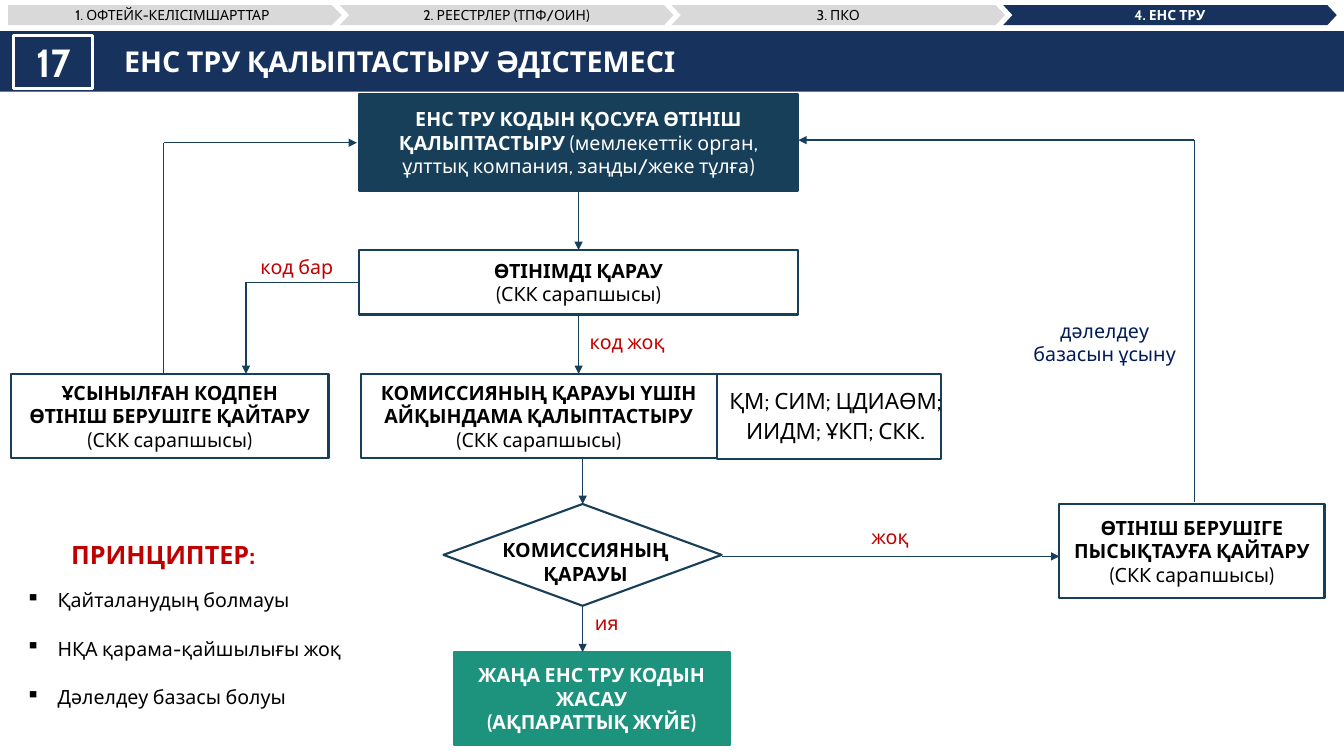
import pptx
import pptx.util
import pptx.dml.color
import pptx.enum.shapes
import pptx.enum.text
import pptx.oxml
import pptx.oxml.ns

Pt = pptx.util.Pt
RGBColor = pptx.dml.color.RGBColor
Shape = pptx.enum.shapes.MSO_SHAPE
Align = pptx.enum.text.PP_ALIGN
Anchor = pptx.enum.text.MSO_ANCHOR

NAVY = RGBColor(0x17, 0x33, 0x5D)
TEAL = RGBColor(0x17, 0x3F, 0x59)
GREEN = RGBColor(0x1D, 0x92, 0x7D)
GREY = RGBColor(0xD9, 0xD9, 0xD9)
RED = RGBColor(0xC0, 0x00, 0x00)
BLUE = RGBColor(0x00, 0x1C, 0x56)
WHITE = RGBColor(0xFF, 0xFF, 0xFF)
BLACK = RGBColor(0x00, 0x00, 0x00)


class Flowchart:
    font = "Cabin"
    size = 14

    def __init__(self, page):
        self.page = page

    def style(self, span, color, bold, size):
        span.font.name = self.font
        span.font.size = Pt(size)
        span.font.bold = bold
        span.font.color.rgb = color

    def add_span(self, para, text, color, size):
        span = para.add_run()
        span.text = text
        self.style(span, color, False, size)

    def put_text(self, box, text, color=BLACK, bold=(False,), size=size,
                 align=Align.CENTER, anchor=Anchor.MIDDLE, inset=7.2):
        frame = box.text_frame
        frame.word_wrap = True
        frame.auto_size = pptx.enum.text.MSO_AUTO_SIZE.NONE
        frame.vertical_anchor = anchor
        frame.margin_left = frame.margin_right = Pt(7.2)
        frame.margin_top = frame.margin_bottom = Pt(inset)
        frame.text = text
        for index, para in enumerate(frame.paragraphs):
            para.alignment = align
            for span in para.runs:
                self.style(span, color, bold[min(index, len(bold) - 1)], size)
        return frame

    def element(self, tag, attributes=""):
        return pptx.oxml.parse_xml(f'<a:{tag} {pptx.oxml.ns.nsdecls("a")} {attributes}/>')

    def shape(self, kind, place, fill=None, line=None, weight=1.5):
        item = self.page.shapes.add_shape(kind, *map(Pt, place))
        item.shadow.inherit = False
        if fill is None:
            item.fill.background()
        else:
            item.fill.solid()
            item.fill.fore_color.rgb = fill
        if line is None:
            item.line.fill.background()
        else:
            item.line.color.rgb = line
            item.line.width = Pt(weight)
        return item

    def title(self, place, text):
        box = self.page.shapes.title
        box.left, box.top, box.width, box.height = map(Pt, place)
        self.put_text(box, text, WHITE, (True,), 20.5, Align.LEFT, inset=3.6)
        return box

    def label(self, place, text, color=RED, **options):
        box = self.page.shapes.add_textbox(*map(Pt, place))
        return self.put_text(box, text, color, anchor=Anchor.TOP, **options)

    def step(self, place, text, fill=WHITE, line=TEAL, color=BLACK, bold=(True, False)):
        return self.put_text(self.shape(Shape.RECTANGLE, place, fill, line), text, color, bold)

    def route(self, *points):
        for start, end in zip(points, points[1:]):
            connector = self.page.shapes.add_connector(
                pptx.enum.shapes.MSO_CONNECTOR.STRAIGHT, *map(Pt, start + end))
            connector.line.color.rgb = TEAL
            connector.line.width = Pt(1)
            properties = connector.element.spPr
            if end == points[-1]:
                outline = properties.find(pptx.oxml.ns.qn("a:ln"))
                outline.append(self.element("tailEnd", 'type="triangle"'))
            properties.append(self.element("effectLst"))

    def bullets(self, place, items):
        frame = self.label(place, "\n".join(items), BLACK, align=Align.LEFT)
        for index, para in enumerate(frame.paragraphs):
            properties = para._p.get_or_add_pPr()
            properties.set("marL", str(Pt(22.5)))
            properties.set("indent", str(-Pt(22.5)))
            properties.append(self.element("buChar", 'char="▪"'))
            if index:
                para.space_before = Pt(18)


def main():
    deck = pptx.Presentation()
    deck.slide_width, deck.slide_height = Pt(960), Pt(540)
    page = deck.slides.add_slide(deck.slide_layouts[5])
    chart = Flowchart(page)

    band = chart.shape(Shape.RECTANGLE, (0, 22.3, 960, 43.2), NAVY)
    title = chart.title((81.4, 27.4, 869, 32.4), "ЕНС ТРУ ҚАЛЫПТАСТЫРУ ӘДІСТЕМЕСІ")
    band.element.addnext(title.element)
    chart.shape(Shape.RECTANGLE, (9.4, 25.2, 56.9, 38.2), line=WHITE, weight=2.25)
    chart.label((7.2, 23.8, 61.9, 41), "17", WHITE, bold=(True,), size=28, inset=3.6)

    sections = ("1. ОФТЕЙК-КЕЛІСІМШАРТТАР", "2. РЕЕСТРЛЕР (ТПФ/ОИН)", "3. ПКО", "4. ЕНС ТРУ")
    for index, section in enumerate(sections):
        current = index == len(sections) - 1
        kind = Shape.CHEVRON if index else Shape.PENTAGON
        tab = chart.shape(kind, (5.8 + 236.9 * index, 3.6, 238.3, 14.4),
                          NAVY if current else GREY)
        if index:
            tab.adjustments[0] = 0.467
        chart.put_text(tab, section, WHITE if current else BLACK, (current,), 10)

    request = chart.step((256.3, 67, 313.9, 69.1), "ЕНС ТРУ КОДЫН ҚОСУҒА ӨТІНІШ ҚАЛЫПТАСТЫРУ",
                         TEAL, color=WHITE)
    chart.add_span(request.paragraphs[0],
                   " (мемлекеттік орган, ұлттық компания, заңды/жеке тұлға)", WHITE, 14)

    expert = "\n(СКК сарапшысы)"
    for place, action in (
        ((256.3, 178.6, 313.9, 46.1), "ӨТІНІМДІ ҚАРАУ"),
        ((7.9, 267.1, 226.8, 59.8), "ҰСЫНЫЛҒАН КОДПЕН ӨТІНІШ БЕРУШІГЕ ҚАЙТАРУ"),
        ((257.8, 267.1, 254.2, 59.8), "КОМИССИЯНЫҢ ҚАРАУЫ ҮШІН АЙҚЫНДАМА ҚАЛЫПТАСТЫРУ"),
        ((756.7, 360, 189.4, 67), "ӨТІНІШ БЕРУШІГЕ ПЫСЫҚТАУҒА ҚАЙТАРУ"),
    ):
        chart.step(place, action + expert)
    chart.step((324, 465.8, 197.3, 66.2), "ЖАҢА ЕНС ТРУ КОДЫН ЖАСАУ\n(АҚПАРАТТЫҚ ЖҮЙЕ)",
               GREEN, GREEN, WHITE, (True,))
    chart.shape(Shape.DIAMOND, (316.8, 360, 198.7, 72.7), WHITE, TEAL)
    chart.label((350.6, 380.9, 135.4, 41), "КОМИССИЯНЫҢ ҚАРАУЫ", BLACK, bold=(True,), inset=3.6)

    chart.route((413.3, 136.1), (413.3, 178.6))
    chart.route((413.3, 224.3), (413.3, 267.1))
    chart.route((416.2, 326.9), (416.2, 360))
    chart.route((416.2, 432.7), (416.2, 465.8))
    chart.route((515.5, 397.4), (756.7, 397.4))
    chart.route((256.3, 201.6), (175.7, 201.6), (175.7, 267.1))
    chart.route((853.2, 358.6), (853.2, 100.1), (570.2, 100.1))
    chart.route((117, 267.1), (117, 102), (254.9, 102))

    chart.label((161.3, 175, 101.5, 31), "код бар")
    chart.label((408, 228.2, 80, 31), "код жоқ")
    chart.label((414.7, 429.1, 37.4, 31), "ия")
    chart.label((609.1, 367.9, 53.3, 31), "жоқ")
    chart.label((725, 220.3, 128.2, 48.2), "дәлелдеу базасын ұсыну", BLUE)

    chart.shape(Shape.RECTANGLE, (511.9, 267.1, 160.6, 60.5), line=TEAL)
    members = chart.label((511.2, 272.9, 171.4, 48.2), "ҚМ; СИМ; ЦДИАӨМ;\nИИДМ; ҰКП; СКК", BLACK,
                          size=16, inset=3.6)
    chart.add_span(members.paragraphs[1], ".", BLACK, 18)

    chart.label((41, 381.6, 151.2, 28.8), "ПРИНЦИПТЕР:", bold=(True,), size=18, inset=3.6)
    chart.bullets((11.5, 412.6, 252, 101.5),
                  ("Қайталанудың болмауы", "НҚА қарама-қайшылығы жоқ", "Дәлелдеу базасы болуы"))

    deck.save("out.pptx")


if __name__ == "__main__":
    main()
